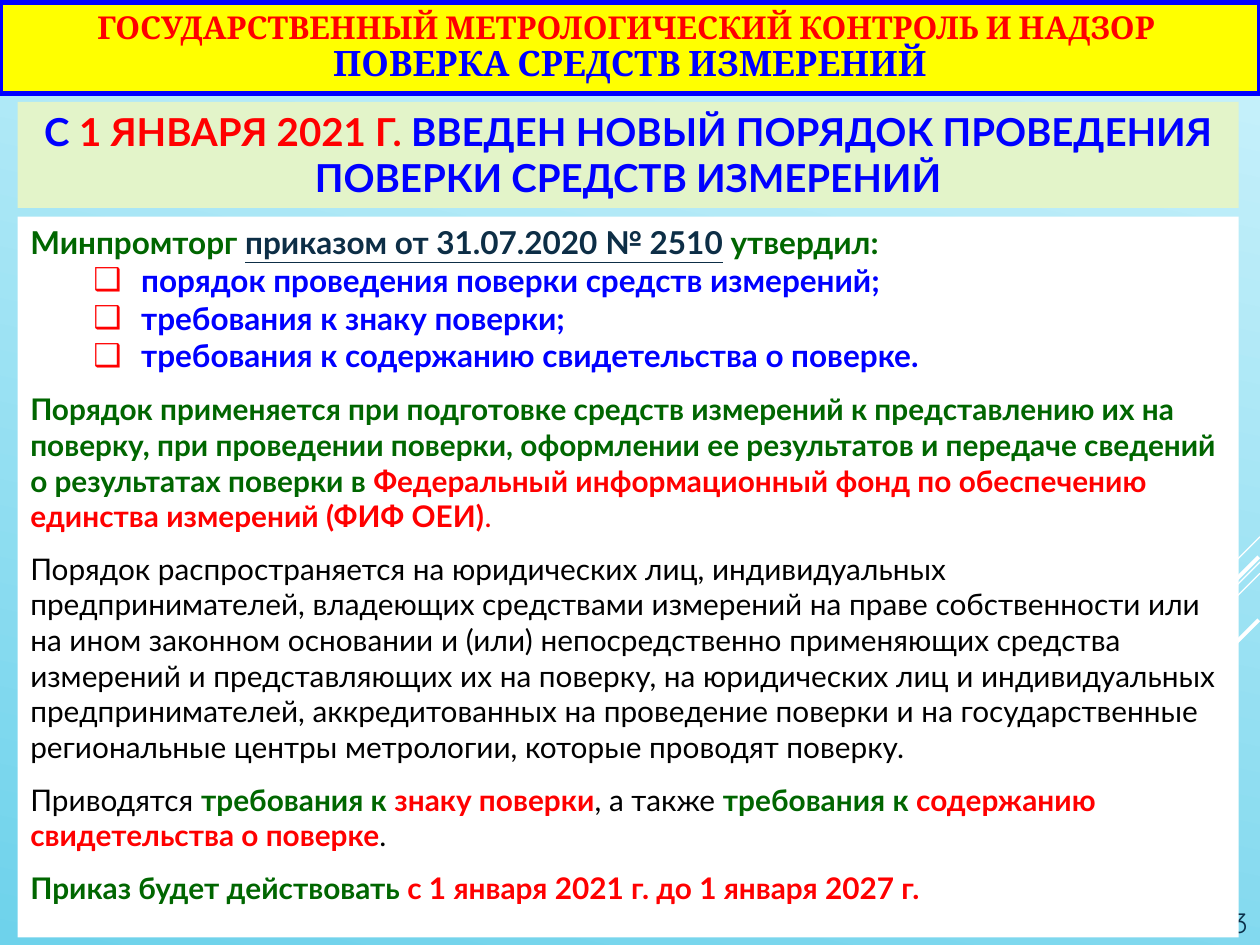
from dataclasses import dataclass

import pptx
import pptx.dml.color
import pptx.enum.shapes
import pptx.enum.text
import pptx.oxml
import pptx.oxml.ns
import pptx.util
from lxml import etree

Inches = pptx.util.Inches
Pt = pptx.util.Pt
RGBColor = pptx.dml.color.RGBColor
Align = pptx.enum.text.PP_ALIGN
Anchor = pptx.enum.text.MSO_ANCHOR

RED = RGBColor(0xFF, 0x00, 0x00)
BLUE = RGBColor(0x00, 0x00, 0xFF)
GREEN = RGBColor(0x00, 0x66, 0x00)
BLACK = RGBColor(0x00, 0x00, 0x00)
WHITE = RGBColor(0xFF, 0xFF, 0xFF)
YELLOW = RGBColor(0xFF, 0xFF, 0x00)
PALE_GREEN = RGBColor(0xE3, 0xF4, 0xC9)
LINK_NAVY = RGBColor(0x0D, 0x2E, 0x46)
NUMBER_NAVY = RGBColor(0x0A, 0x30, 0x4A)
SKY_LIGHT = RGBColor(0xC8, 0xF1, 0xFB)
SKY_DARK = RGBColor(0x6E, 0xD2, 0xEB)


@dataclass
class Span:
    text: str
    color: RGBColor
    bold: bool = True
    underline: bool = False


@dataclass
class Para:
    spans: list[Span]
    size: float = 17
    gap: float = 9.5
    bullet: bool = False


@dataclass
class Ray:
    start: tuple[float, float]
    end: tuple[float, float]
    width: float = 0.75


RAYS = [
    Ray((10, 4.26), (9.17, 5.09)),
    Ray((10, 4.46), (7.3, 7.17)),
    Ray((10, 4.55), (8.28, 6.27)),
    Ray((9.99, 4.42), (8.42, 5.99), 2.25),
    Ray((9.99, 4.92), (8.85, 6.06), 2.25),
]

BULLETS = [
    "порядок проведения поверки средств измерений;",
    "требования к знаку поверки;",
    "требования к содержанию свидетельства о поверке.",
]

BODY = [
    Para([Span("Минпромторг ", GREEN),
          Span("приказом от 31.07.2020 № 2510", LINK_NAVY, underline=True),
          Span(" утвердил:", GREEN)], size=18, gap=0),
    *[Para([Span(text, BLUE)], size=18, gap=0, bullet=True) for text in BULLETS],
    Para([Span("Порядок применяется при подготовке средств измерений к представлению "
               "их на поверку, при проведении поверки, оформлении ее результатов и "
               "передаче сведений о результатах поверки в ", GREEN),
          Span("Федеральный информационный фонд по обеспечению единства измерений "
               "(ФИФ ОЕИ)", RED),
          Span(".", RED, bold=False)]),
    Para([Span("Порядок распространяется на юридических лиц, индивидуальных "
               "предпринимателей, владеющих средствами измерений на праве "
               "собственности или на ином законном основании и (или) непосредственно "
               "применяющих средства измерений и представляющих их на поверку, на "
               "юридических лиц и индивидуальных предпринимателей, аккредитованных на "
               "проведение поверки и на государственные региональные центры "
               "метрологии, которые проводят поверку.", BLACK, bold=False)]),
    Para([Span("Приводятся ", BLACK, bold=False),
          Span("требования к ", GREEN),
          Span("знаку поверки", RED),
          Span(", а также ", BLACK, bold=False),
          Span("требования к ", GREEN),
          Span("содержанию свидетельства о поверке", RED),
          Span(".", BLACK, bold=False)]),
    Para([Span("Приказ будет действовать ", GREEN),
          Span("с 1 января 2021 г. до 1 января 2027 г.", RED)]),
]


def place(box, left: float, top: float, width: float, height: float) -> None:
    box.left, box.top = Inches(left), Inches(top)
    box.width, box.height = Inches(width), Inches(height)


def paint(box, color: RGBColor) -> None:
    box.fill.solid()
    box.fill.fore_color.rgb = color


def setup_frame(box, anchor):
    frame = box.text_frame
    frame.word_wrap = True
    frame.auto_size = pptx.enum.text.MSO_AUTO_SIZE.NONE
    frame.vertical_anchor = anchor
    return frame


def add_span(paragraph, span: Span, size: float, font: str) -> None:
    run = paragraph.add_run()
    run.text = span.text
    run.font.name = font
    run.font.size = Pt(size)
    run.font.bold = span.bold
    if span.underline:
        run.font.underline = True
    run.font.color.rgb = span.color


def set_bullet(paragraph, bullet: bool) -> None:
    properties = paragraph._p.get_or_add_pPr()
    properties.set("marL", str(Inches(0.88 if bullet else 0)))
    properties.set("indent", str(Inches(-0.38 if bullet else 0)))
    qn = pptx.oxml.ns.qn
    if bullet:
        color = etree.SubElement(properties, qn("a:buClr"))
        etree.SubElement(color, qn("a:srgbClr"), val=str(RED))
        etree.SubElement(properties, qn("a:buChar"), char="❑")
    else:
        etree.SubElement(properties, qn("a:buNone"))


def add_ray(page, ray: Ray) -> None:
    line = page.shapes.add_connector(
        pptx.enum.shapes.MSO_CONNECTOR.STRAIGHT,
        *map(Inches, ray.start), *map(Inches, ray.end))
    line.line.color.rgb = WHITE
    line.line.width = Pt(ray.width)
    etree.SubElement(line.element.spPr, pptx.oxml.ns.qn("a:effectLst"))


def main() -> None:
    deck = pptx.Presentation()
    deck.slide_width, deck.slide_height = Inches(10), Inches(7.5)
    page = deck.slides.add_slide(deck.slide_layouts[1])
    title, body = page.shapes.title, page.placeholders[1]

    # Background gradient and corner rays
    sky = page.background.fill
    sky.gradient()
    sky.gradient_angle = 258
    for stop, color, position in zip(sky.gradient_stops, (SKY_LIGHT, SKY_DARK), (0.04, 1)):
        stop.color.rgb = color
        stop.position = position
    for ray in RAYS:
        add_ray(page, ray)

    # Page number, partly covered by the body panel
    number = page.shapes.add_textbox(Inches(9.06), Inches(6.77), Inches(0.94), Inches(0.73))
    para = setup_frame(number, Anchor.BOTTOM).paragraphs[0]
    para.alignment = Align.RIGHT
    add_span(para, Span("43", NUMBER_NAVY, bold=False), 16, "Quicksand")

    # Title banner
    place(title, 0, 0.02, 10, 0.72)
    paint(title, YELLOW)
    title.line.color.rgb = BLUE
    title.line.width = Pt(3)
    para = setup_frame(title, Anchor.MIDDLE).paragraphs[0]
    para.alignment = Align.CENTER
    para.line_spacing = 0.9
    add_span(para, Span("ГОСУДАРСТВЕННЫЙ МЕТРОЛОГИЧЕСКИЙ КОНТРОЛЬ И НАДЗОР ", RED), 18, "Cambria")
    para.add_line_break()
    add_span(para, Span("ПОВЕРКА СРЕДСТВ ИЗМЕРЕНИЙ", BLUE), 20, "Cambria")

    # Headline panel
    headline = page.shapes.add_textbox(Inches(0.14), Inches(0.81), Inches(9.69), Inches(0.84))
    paint(headline, PALE_GREEN)
    para = setup_frame(headline, Anchor.TOP).paragraphs[0]
    para.alignment = Align.CENTER
    for span in (Span("С ", BLUE), Span("1 ЯНВАРЯ 2021 Г. ", RED),
                 Span("ВВЕДЕН НОВЫЙ ПОРЯДОК ПРОВЕДЕНИЯ ПОВЕРКИ СРЕДСТВ ИЗМЕРЕНИЙ", BLUE)):
        add_span(para, span, 22, "Lato")

    # Body panel
    place(body, 0.14, 1.72, 9.69, 5.72)
    paint(body, WHITE)
    frame = setup_frame(body, Anchor.TOP)
    for index, item in enumerate(BODY):
        para = frame.add_paragraph() if index else frame.paragraphs[0]
        para.space_before = Pt(item.gap)
        set_bullet(para, item.bullet)
        for span in item.spans:
            add_span(para, span, item.size, "Lato")

    # Bring the panels in front of the rays and the page number
    for box in (title, headline, body):
        box.element.getparent().append(box.element)

    deck.save("out.pptx")


if __name__ == "__main__":
    main()
